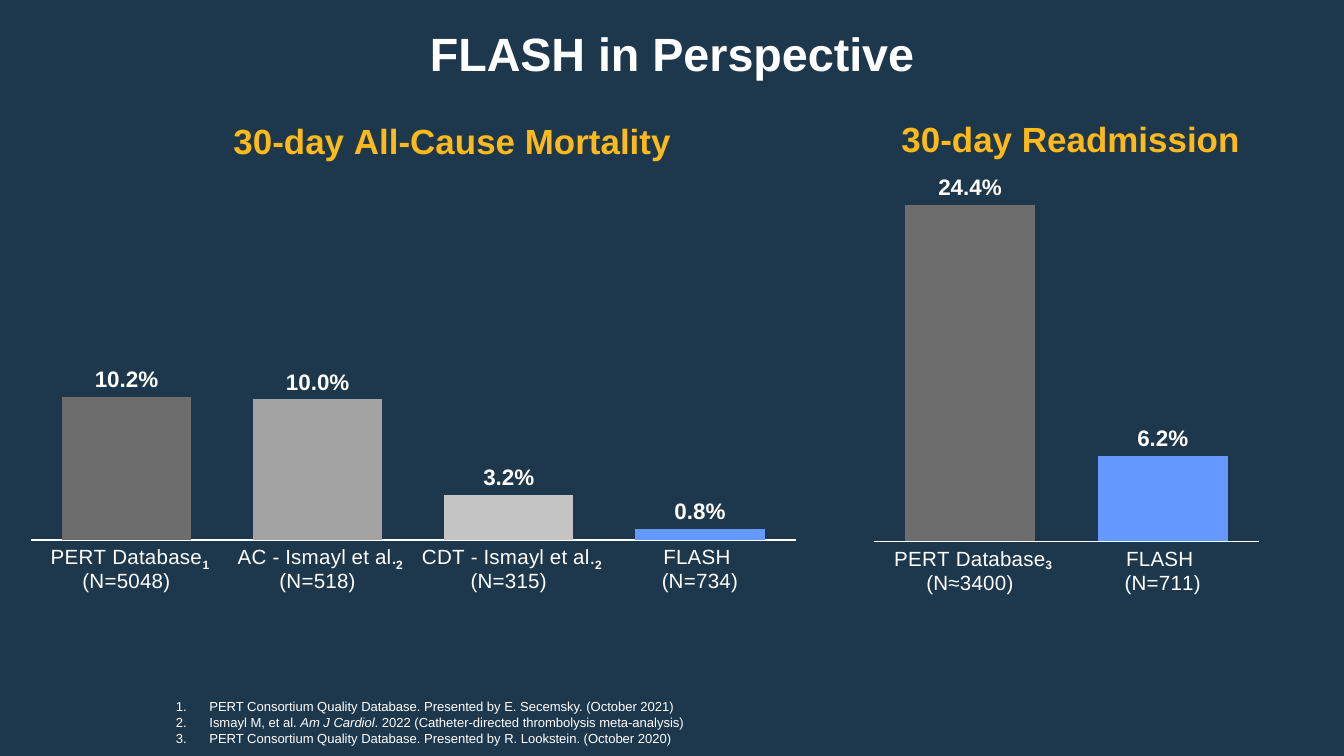
from dataclasses import dataclass

from lxml.etree import SubElement
from pptx import Presentation
from pptx.chart.data import CategoryChartData
from pptx.dml.color import RGBColor
from pptx.enum.chart import XL_CHART_TYPE, XL_LABEL_POSITION, XL_TICK_LABEL_POSITION, XL_TICK_MARK
from pptx.enum.text import MSO_ANCHOR, PP_ALIGN
from pptx.oxml import parse_xml
from pptx.oxml.ns import nsdecls, qn
from pptx.util import Inches, Pt


@dataclass(frozen=True)
class Theme:
    face: str = "Arial"
    back: str = "1D384C"
    white: str = "FFFFFF"
    gold: str = "FEB91A"
    dark: str = "6D6D6D"
    mid: str = "A3A3A3"
    light: str = "C4C4C4"
    blue: str = "6699FF"
    title: float = 25
    head: float = 18.7
    value: float = 12
    label: float = 11
    note: float = 7


THEME = Theme()


def style(font, size, color=THEME.white, bold=False, italic=False):
    font.name = THEME.face
    font.size = Pt(size)
    font.color.rgb = RGBColor.from_string(color)
    font.bold = bold
    font.italic = italic


def write(para, text, base=0, **form):
    run = para.add_run()
    run.text = text
    style(run.font, **form)
    if base:
        run.font._rPr.set("baseline", str(base * 1000))


def add_box(slide, left, top, width, height):
    box = slide.shapes.add_textbox(Inches(left), Inches(top), Inches(width), Inches(height))
    box.text_frame.word_wrap = True
    return box.text_frame


def add_title(slide, text):
    frame = add_box(slide, 0.75, 0.12, 8.5, 0.62)
    frame.vertical_anchor = MSO_ANCHOR.MIDDLE
    para = frame.paragraphs[0]
    para.alignment = PP_ALIGN.CENTER
    para.line_spacing = 0.8
    write(para, text, size=THEME.title, bold=True)


def add_notes(slide, notes):
    frame = add_box(slide, 1.21, 5.15, 4.48, 0.34)
    for index, parts in enumerate(notes):
        para = frame.add_paragraph() if index else frame.paragraphs[0]
        props = para._p.get_or_add_pPr()
        props.set("marL", str(Inches(0.25)))
        props.set("indent", str(Inches(-0.25)))
        SubElement(props, qn("a:buFont")).set("typeface", THEME.face)
        SubElement(props, qn("a:buAutoNum")).set("type", "arabicPeriod")
        for place, part in enumerate(parts):
            write(para, part, size=THEME.note, italic=place == 1)


def add_mark(slide, text, left, width=0.57):
    frame = add_box(slide, left, 4.08, width, 0.22)
    write(frame.paragraphs[0], text, size=THEME.label, bold=True, base=30)


def place(node, spot, left, top, width=0, height=0):
    wide, high = spot[2:]
    rows = [("xMode", "edge"), ("yMode", "edge"), ("x", left / wide), ("y", top / high)]
    if width:
        rows = [("layoutTarget", "inner"), *rows, ("w", width / wide), ("h", height / high)]
    body = "".join(f'<c:{name} val="{value}"/>' for name, value in rows)
    for old in node.findall(qn("c:layout")):
        node.remove(old)
    layout = parse_xml(f'<c:layout {nsdecls("c")}><c:manualLayout>{body}</c:manualLayout></c:layout>')
    text = node.find(qn("c:tx"))
    node.insert(0 if text is None else 1, layout)


def add_bars(slide, spot, head, start, plot, top, bars):
    data = CategoryChartData(number_format="0.0%")
    data.categories = [name for name, value, color in bars]
    data.add_series("Series 1", [value for name, value, color in bars])
    shape = slide.shapes.add_chart(
        XL_CHART_TYPE.COLUMN_CLUSTERED, *(Inches(side) for side in spot), data)
    chart = shape.chart
    chart.has_legend = False
    style(chart.font, 10)

    chart.has_title = True
    write(chart.chart_title.text_frame.paragraphs[0], head,
          size=THEME.head, color=THEME.gold, bold=True)
    chart.chart_title.include_in_layout = False
    place(chart.chart_title._element, spot, *start)
    place(chart._chartSpace.chart.plotArea, spot, *plot)

    names = chart.category_axis
    names.major_tick_mark = XL_TICK_MARK.NONE
    names.format.line.color.rgb = RGBColor.from_string(THEME.white)
    names.format.line.width = Pt(0.75)
    style(names.tick_labels.font, THEME.label)

    scale = chart.value_axis
    scale.minimum_scale, scale.maximum_scale, scale.major_unit = 0, top, 0.04
    scale.has_major_gridlines = False
    scale.major_tick_mark = XL_TICK_MARK.NONE
    scale.tick_label_position = XL_TICK_LABEL_POSITION.NONE
    scale.format.line.fill.background()

    group = chart.plots[0]
    group.gap_width = 48
    group.vary_by_categories = False
    group.has_data_labels = True
    labels = group.data_labels
    labels.show_value = True
    labels.number_format = "0.0%"
    labels.number_format_is_linked = False
    labels.position = XL_LABEL_POSITION.OUTSIDE_END
    style(labels.font, THEME.value, bold=True)

    series = group.series[0]
    series.format.fill.solid()
    series.format.fill.fore_color.rgb = RGBColor.from_string(THEME.gold)
    for index, (name, value, color) in enumerate(bars):
        fill = series.points[index].format.fill
        fill.solid()
        fill.fore_color.rgb = RGBColor.from_string(color)


def main():
    deck = Presentation()
    deck.slide_width = Inches(10)
    deck.slide_height = Inches(10 * 9 / 16)
    slide = deck.slides.add_slide(deck.slide_layouts[6])
    slide.background.fill.solid()
    slide.background.fill.fore_color.rgb = RGBColor.from_string(THEME.back)

    add_title(slide, "FLASH in Perspective")
    add_notes(slide, [
        ["PERT Consortium Quality Database. Presented by E. Secemsky. (October 2021)"],
        ["Ismayl M, et al. ", "Am J Cardiol", ". 2022 (Catheter-directed thrombolysis meta-analysis)"],
        ["PERT Consortium Quality Database. Presented by R. Lookstein. (October 2020)"],
    ])
    add_bars(slide, (0.19, 0.47, 5.84, 4.28), "30-day All-Cause Mortality",
             (1.5, 0.36), (0.04, 1.98, 5.69, 1.57), 0.15, [
                 ("PERT Database (N=5048)", 0.102, THEME.dark),
                 ("AC - Ismayl et al.\n(N=518)", 0.1, THEME.mid),
                 ("CDT - Ismayl et al. (N=315)", 0.032, THEME.light),
                 ("FLASH \n(N=734)", 0.008, THEME.blue),
             ])
    add_bars(slide, (6.07, 0.33, 3.79, 4.28), "30-day Readmission",
             (0.59, 0.49), (0.43, 0.62, 2.87, 3.08), 0.3, [
                 ("PERT Database (N≈3400)", 0.244, THEME.dark),
                 ("FLASH \n(N=711)", 0.062, THEME.blue),
             ])
    add_mark(slide, "1", 1.41, 0.33)
    for text, left in [("2", 2.85), ("2", 4.33), ("3", 7.68)]:
        add_mark(slide, text, left)
    deck.save("out.pptx")


if __name__ == "__main__":
    main()
